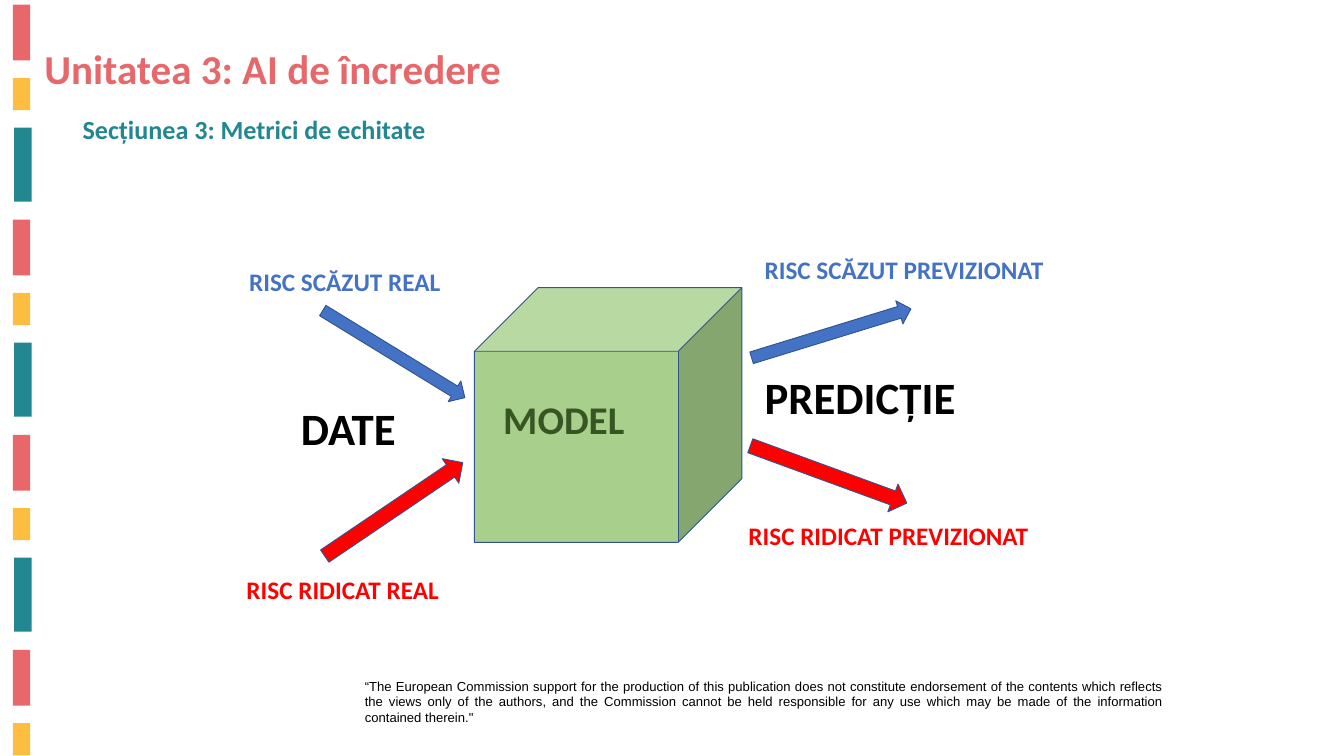
from pptx import Presentation
from pptx.dml.color import RGBColor
from pptx.enum.shapes import MSO_SHAPE
from pptx.enum.text import MSO_ANCHOR, PP_ALIGN
from pptx.util import Inches, Pt

RECTANGLE, CUBE, ARROW = MSO_SHAPE.RECTANGLE, MSO_SHAPE.CUBE, MSO_SHAPE.RIGHT_ARROW
TOP, LEFT, JUSTIFY = MSO_ANCHOR.TOP, PP_ALIGN.LEFT, PP_ALIGN.JUSTIFY

THEME = {
    "font": "Calibri", "small_font": "Arial",
    "coral": "E8676A", "yellow": "FDBD40", "teal": "238791", "title": "E7686A",
    "low": "4472C4", "high": "FF0000", "outline": "31538F",
    "cube": "A8D08C", "model": "385623", "black": "000000",
    "title_size": 44, "section_size": 28, "stage_size": 48,
    "model_size": 42, "risk_size": 27, "note_size": 14,
}

deck = Presentation()
deck.slide_width, deck.slide_height = Inches(20), Inches(11.25)
COLUMN, ROW = deck.slide_width / 20, deck.slide_height / 11.25
page = deck.slides.add_slide(deck.slide_layouts[5])


def write(box, text, place, size, color, font="font", align=LEFT):
    left, top, width, height = place
    box.left, box.width = int(left * COLUMN), int(width * COLUMN)
    box.top, box.height = int(top * ROW), int(height * ROW)
    frame = box.text_frame
    frame.word_wrap = True
    frame.vertical_anchor = TOP
    frame.text = text
    para = frame.paragraphs[0]
    para.alignment = align
    span = para.runs[0]
    span.font.name = THEME[font]
    span.font.size = Pt(THEME[size])
    span.font.bold = font == "font"
    span.font.color.rgb = RGBColor.from_string(THEME[color])


def draw(kind, place, color, outlined=True):
    left, top, width, height = place
    shape = page.shapes.add_shape(kind, int(left * COLUMN), int(top * ROW),
                                  int(width * COLUMN), int(height * ROW))
    shape.shadow.inherit = False
    shape.fill.solid()
    shape.fill.fore_color.rgb = RGBColor.from_string(THEME[color])
    if outlined:
        shape.line.color.rgb = RGBColor.from_string(THEME["outline"])
        shape.line.width = Pt(1)
    else:
        shape.line.fill.background()
    return shape


# Striped left edge: coral, yellow and teal repeat until the slide ends
STRIPE_PERIOD = 3.2
stripes = [("coral", 0.19, 0.07, 0.83), ("yellow", 0.19, 1.16, 0.48), ("teal", 0.21, 1.9, 1.1)]
for cycle in range(4):
    for color, left, first_top, height in stripes:
        top = first_top + cycle * STRIPE_PERIOD
        if top < 11.25:
            draw(RECTANGLE, (left, top, 0.26, height), color, outlined=False)

# Model cube
draw(CUBE, (7.06, 4.28, 3.98, 3.79), "cube")

# Arrows into and out of the model
arrows = [
    (4.62, 5.09, 0.36, 31.5, "low"),
    (4.62, 7.36, 0.44, 325.9, "high"),
    (11.13, 4.78, 0.36, 342.9, "low"),
    (11.09, 6.84, 0.44, 20.1, "high"),
]
for left, top, height, angle, color in arrows:
    draw(ARROW, (left, top, 2.48, height), color).rotation = angle

# Title
title = page.shapes.title
write(title, "Unitatea 3: AI de încredere", (0.56, 0.68, 8.91, 0.61), "title_size", "title")
title.text_frame.paragraphs[0].line_spacing = 0.9

# Section heading and diagram labels
labels = [
    ("Secțiunea 3: Metrici de echitate", (1.13, 1.64, 10.98, 0.57), "section_size", "teal"),
    ("DATE", (4.38, 5.91, 2.24, 0.91), "stage_size", "black"),
    ("MODEL", (7.39, 5.84, 2.42, 0.81), "model_size", "model"),
    ("PREDICȚIE", (11.28, 5.45, 4.81, 0.91), "stage_size", "black"),
    ("RISC SCĂZUT REAL", (3.61, 3.91, 3.46, 0.56), "risk_size", "low"),
    ("RISC RIDICAT REAL", (3.57, 8.49, 3.5, 0.56), "risk_size", "high"),
    ("RISC SCĂZUT PREVIZIONAT", (11.28, 3.74, 4.55, 0.56), "risk_size", "low"),
    ("RISC RIDICAT PREVIZIONAT", (11.04, 7.69, 4.96, 0.56), "risk_size", "high"),
]
for text, place, size, color in labels:
    write(page.shapes.add_textbox(0, 0, 0, 0), text, place, size, color)

# Funding disclaimer
disclaimer = (
    "“The European Commission support for the production of this publication does not "
    "constitute endorsement of the contents which reflects the views only of the authors, "
    "and the Commission cannot be held responsible for any use which may be made of the "
    "information contained therein.\""
)
write(page.shapes.add_textbox(0, 0, 0, 0), disclaimer, (5.33, 10.04, 12.08, 0.81),
      "note_size", "black", "small_font", JUSTIFY)

deck.save("out.pptx")
